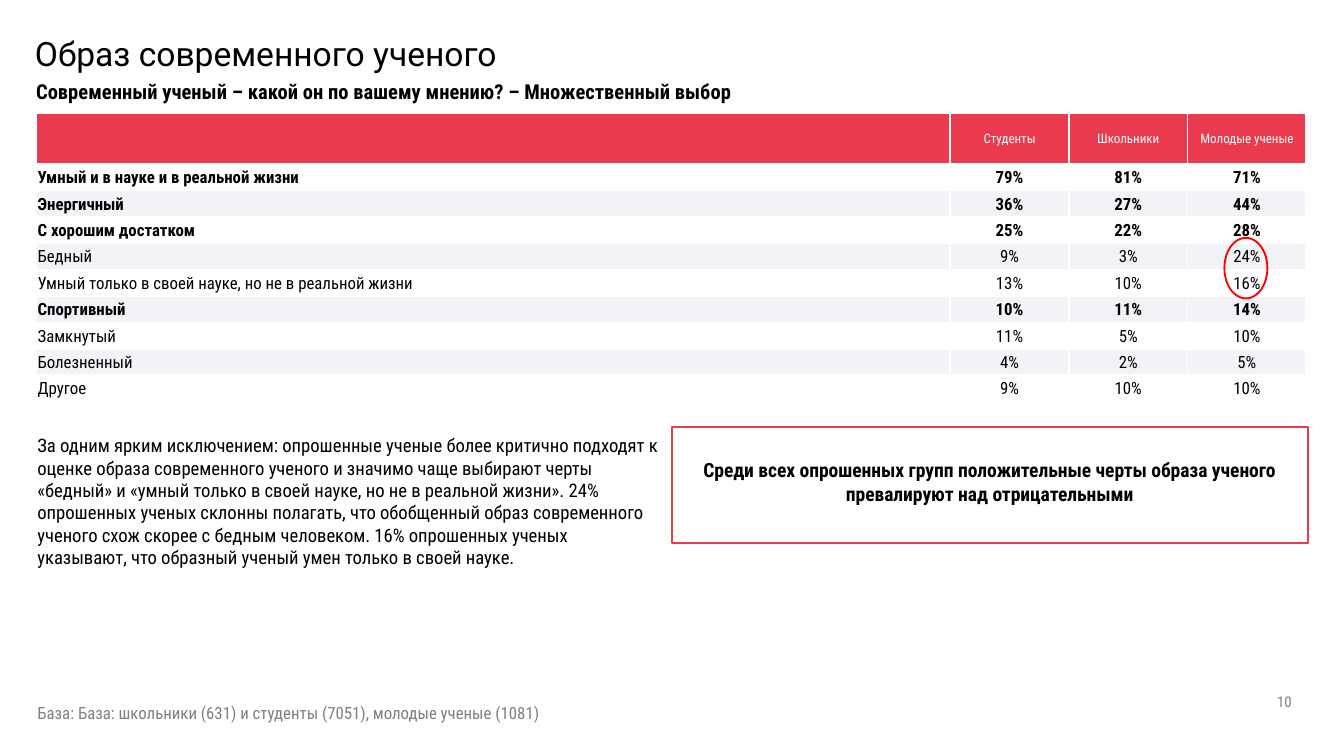
"""Build the survey slide on the image of the modern scientist."""
from pptx import Presentation
from pptx.dml.color import RGBColor
from pptx.enum.shapes import MSO_SHAPE
from pptx.enum.text import MSO_ANCHOR, MSO_AUTO_SIZE, PP_ALIGN
from pptx.oxml import parse_xml
from pptx.oxml.ns import nsdecls
from pptx.util import Inches, Pt

RED, BAND, WHITE, BLACK, GRAY = "E93A4E", "F2F3F6", "FFFFFF", "000000", "808080"
LEFT, CENTER, RIGHT = PP_ALIGN.LEFT, PP_ALIGN.CENTER, PP_ALIGN.RIGHT

TITLE = "Образ современного ученого"
GROUPS = ("", "Студенты", "Школьники", "Молодые ученые")
TRAITS = [
    ("Умный и в науке и в реальной жизни", "79%", "81%", "71%"),
    ("Энергичный", "36%", "27%", "44%"),
    ("С хорошим достатком", "25%", "22%", "28%"),
    ("Бедный", "9%", "3%", "24%"),
    ("Умный только в своей науке, но не в реальной жизни", "13%", "10%", "16%"),
    ("Спортивный", "10%", "11%", "14%"),
    ("Замкнутый", "11%", "5%", "10%"),
    ("Болезненный", "4%", "2%", "5%"),
    ("Другое", "9%", "10%", "10%"),
]
POSITIVE_ROWS = {1, 2, 3, 6}
TEXTS = [
    ("10", (7.46, 5.07, 2.25, 0.3),
     {"size": 8, "color": GRAY, "align": RIGHT},
     {"vertical_anchor": MSO_ANCHOR.MIDDLE}),
    ("Среди всех опрошенных групп положительные черты образа ученого "
     "превалируют над отрицательными", (5, 3.36, 4.73, 0.45),
     {"size": 10.5, "bold": True, "align": CENTER}, {}),
    ("За одним ярким исключением: опрошенные ученые более критично подходят к "
     "оценке образа современного ученого и значимо чаще выбирают черты «бедный» "
     "и «умный только в своей науке, но не в реальной жизни». 24% опрошенных "
     "ученых склонны полагать, что обобщенный образ современного ученого схож "
     "скорее с бедным человеком. 16% опрошенных ученых указывают, что образный "
     "ученый умен только в своей науке.", (0.18, 3.18, 4.82, 1.11),
     {"size": 10}, {}),
    ("Современный ученый – какой он по вашему мнению? – Множественный выбор",
     (0.17, 0.49, 8.24, 0.7), {"size": 11, "bold": True, "spacing": 1.02},
     {"margin_top": Inches(0.1), "margin_bottom": Inches(0.1)}),
    ("База: База: школьники (631) и студенты (7051), молодые ученые (1081)",
     (0.18, 5.18, 4.82, 0.25), {"size": 9, "color": GRAY}, {}),
]
OUTLINES = [
    (MSO_SHAPE.RECTANGLE, (5, 3.18, 4.73, 0.86), RED),
    (MSO_SHAPE.OVAL, (9.11, 1.77, 0.32, 0.45), "FF0000"),
]
TABLE_BOX = (0.27, 0.84, 9.45, 2.15)
TRAIT_WIDTH, HEADER_HEIGHT = 6.8, 0.38


def rgb(value):
    return RGBColor.from_string(value)


def inches(box):
    return [Inches(length) for length in box]


def set_all(target, values):
    for key, value in values.items():
        setattr(target, key, value)


def write(frame, text, size, color=BLACK, bold=False, align=LEFT,
          spacing=None, face="Roboto Condensed"):
    paragraph = frame.paragraphs[0]
    set_all(paragraph, {"alignment": align, "line_spacing": spacing})
    run = paragraph.add_run()
    run.text = text
    set_all(run.font, {"name": face, "size": Pt(size), "bold": bold})
    run.font.color.rgb = rgb(color)


def add_borders(cell):
    properties = cell._tc.get_or_add_tcPr()
    for index, side in enumerate("LRTB"):
        properties.insert(index, parse_xml(
            f'<a:ln{side} {nsdecls("a")} w="{Pt(1)}"><a:solidFill>'
            f'<a:srgbClr val="{WHITE}"/></a:solidFill></a:ln{side}>'))


def add_title(slide):
    title = slide.shapes.title
    set_all(title, dict(zip(("left", "top", "width", "height"),
                            inches((0.16, 0.15, 8.62, 1.09)))))
    set_all(title.text_frame, {
        "vertical_anchor": MSO_ANCHOR.TOP, "margin_top": Inches(0.12),
        "auto_size": MSO_AUTO_SIZE.NONE, "word_wrap": True})
    write(title.text_frame, TITLE, 18, spacing=Pt(20), face="Roboto")


def add_texts(slide):
    for text, box, style, layout in TEXTS:
        frame = slide.shapes.add_textbox(*inches(box)).text_frame
        set_all(frame, {"word_wrap": True, **layout})
        write(frame, text, **style)


def add_trait_table(slide):
    rows = [GROUPS, *TRAITS]
    table = slide.shapes.add_table(
        len(rows), len(GROUPS), *inches(TABLE_BOX)).table
    table.horz_banding = False
    trait_height = (TABLE_BOX[3] - HEADER_HEIGHT) / len(TRAITS)
    group_width = (TABLE_BOX[2] - TRAIT_WIDTH) / (len(GROUPS) - 1)
    for c, column in enumerate(table.columns):
        column.width = Inches(group_width if c else TRAIT_WIDTH)
    for r, values in enumerate(rows):
        table.rows[r].height = Inches(trait_height if r else HEADER_HEIGHT)
        fill = (BAND, WHITE)[r % 2] if r else RED
        for c, value in enumerate(values):
            cell = table.cell(r, c)
            set_all(cell, {
                "margin_left": Inches(0.01), "margin_right": Inches(0.01),
                "margin_top": Inches(0.01), "margin_bottom": 0,
                "vertical_anchor": MSO_ANCHOR.MIDDLE})
            cell.fill.solid()
            cell.fill.fore_color.rgb = rgb(fill)
            add_borders(cell)
            if value:
                write(cell.text_frame, value, 9 if r else 7,
                      BLACK if r else WHITE, r in POSITIVE_ROWS,
                      CENTER if c else LEFT)


def add_outlines(slide):
    for kind, box, color in OUTLINES:
        outline = slide.shapes.add_shape(kind, *inches(box))
        outline.shadow.inherit = False
        outline.fill.background()
        outline.line.color.rgb = rgb(color)
        outline.line.width = Pt(1)


def main():
    deck = Presentation()
    width = Inches(10)
    set_all(deck, {"slide_width": width, "slide_height": width * 9 // 16})
    slide = deck.slides.add_slide(deck.slide_layouts[5])
    add_title(slide)
    add_texts(slide)
    add_trait_table(slide)
    add_outlines(slide)
    deck.save("out.pptx")


if __name__ == "__main__":
    main()
